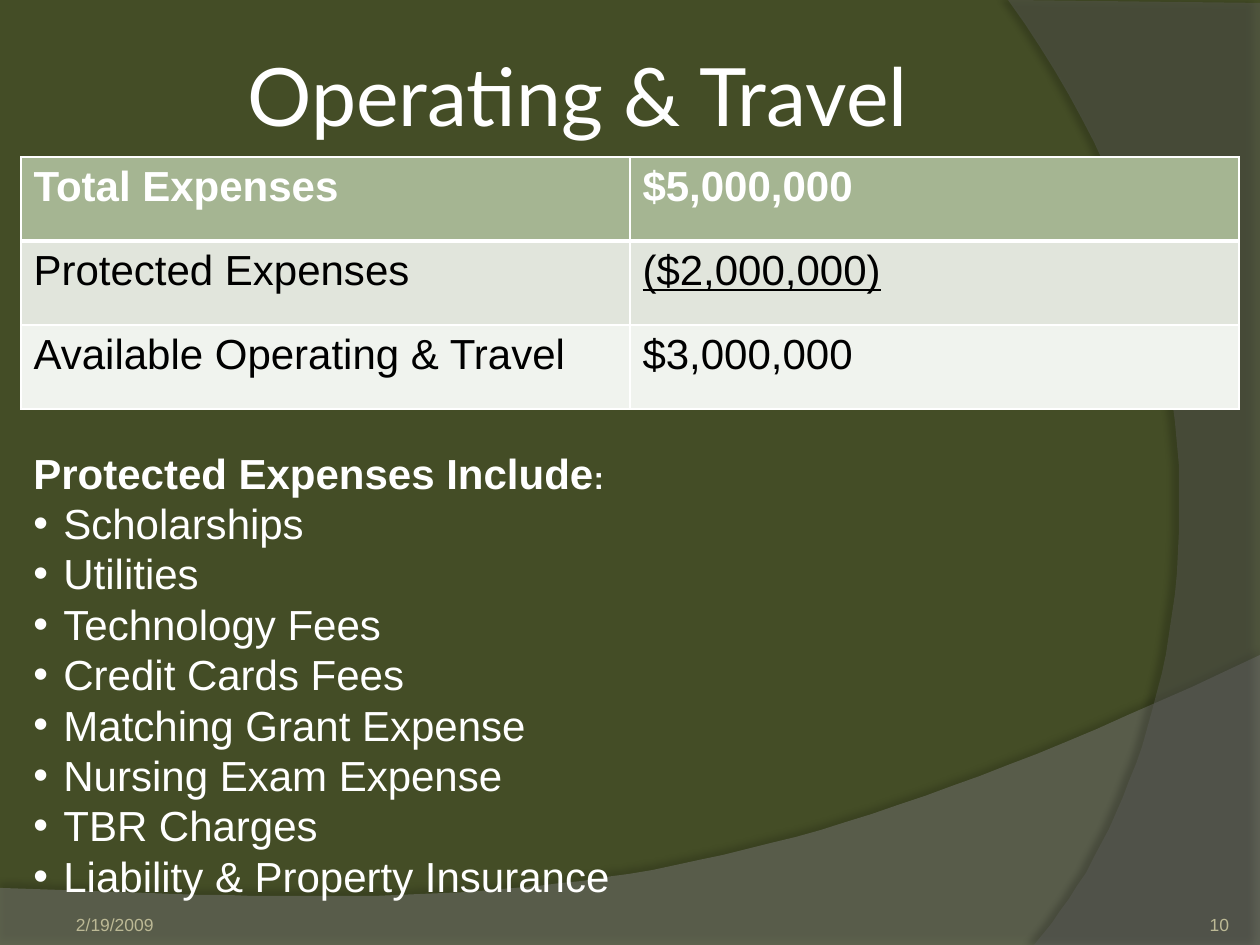
from lxml import etree
from pptx import Presentation
from pptx import util as u
from pptx.dml.color import RGBColor
from pptx.enum import text
from pptx.oxml import ns

PX = 914400 / 126
THEME = {
    "background": "444D26", "white": "FFFFFF", "black": "000000", "footer": "BCB995",
    "rows": ["A5B592", "E1E5DC", "F0F3EE"],
    "title_size": 46, "body_size": 24, "colon_size": 18, "footer_size": 10,
    "title_font": "Lato", "body_font": "Arial", "line_pitch": 28.8,
}
TITLE = {"text": "Operating & Travel", "area": (63, 21, 1029, 147)}
BUDGET = [
    ("Total Expenses", "$5,000,000"),
    ("Protected Expenses", "($2,000,000)"),
    ("Available Operating & Travel", "$3,000,000"),
]
TABLE_AREA = (21, 157, 1218, 252)
LIST_AREA = (21, 441, 1218, 504)
LIST_HEADING = "Protected Expenses Include"
PROTECTED = [
    "Scholarships", "Utilities", "Technology Fees", "Credit Cards Fees",
    "Matching Grant Expense", "Nursing Exam Expense", "TBR Charges",
    "Liability & Property Insurance",
]
BULLET_INDENT = 30
FOOTERS = [
    {"text": "2/19/2009", "area": (63, 885, 294, 50), "margins": (13, 6, 13, 0),
     "align": text.PP_ALIGN.LEFT},
    {"text": "10", "area": (1124, 885, 105, 50), "margins": (0, 0, 0, 0),
     "align": text.PP_ALIGN.RIGHT},
]
WAVES = [
    {"corners": [(0, 888), (0, 946), (1260, 946)],
     "curve": [(1260, 655), (704, 919), (493, 906), (0, 888)],
     "color": "7F7F7F", "opacity": 45, "shadow": (35, 4, 3.5, 270)},
    {"corners": [(1260, 3), (1260, 945)],
     "curve": [(1034, 945), (1178, 780), (1283, 378), (1008, 0)],
     "color": "5E5E5E", "opacity": 40, "shadow": (45, 4, 4, 180)},
]


def emu(px):
    return round(px * PX)


def child(parent, tag, **attributes):
    node = etree.SubElement(parent, ns.qn(tag))
    for name, value in attributes.items():
        node.set(name, str(value))
    return node


def apply(target, values):
    for name, value in values.items():
        setattr(target, name, value)


def bezier(points, steps=48):
    for step in range(steps + 1):
        t = step / steps
        weights = ((1 - t) ** 3, 3 * t * (1 - t) ** 2, 3 * t * t * (1 - t), t ** 3)
        yield tuple(sum(w * p[axis] for w, p in zip(weights, points)) for axis in (0, 1))


def add_wave(page, wave):
    outline = wave["corners"] + list(bezier(wave["curve"]))
    builder = page.shapes.build_freeform(*outline[0], scale=PX)
    builder.add_line_segments(outline[1:], close=True)
    shape = builder.convert_to_shape()
    shape.fill.solid()
    shape.fill.fore_color.rgb = RGBColor.from_string(wave["color"])
    shape.line.fill.background()
    shape.shadow.inherit = False
    properties = shape.element.spPr
    color = properties.find(ns.qn("a:solidFill"))[0]
    child(color, "a:alpha", val=wave["opacity"] * 1000)
    opacity, blur, distance, angle = wave["shadow"]
    shadow = child(properties.find(ns.qn("a:effectLst")), "a:outerShdw",
                   blurRad=u.Pt(blur), dist=u.Pt(distance), dir=angle * 60000,
                   algn="ctr", rotWithShape=0)
    child(child(shadow, "a:srgbClr", val=THEME["black"]), "a:alpha", val=opacity * 1000)


def write(para, words, size, color, font="body_font", **extra):
    span = para.add_run()
    span.text = words
    apply(span.font, {"name": THEME[font], "size": u.Pt(THEME[size]), **extra})
    span.font.color.rgb = RGBColor.from_string(THEME[color])


def add_box(page, area):
    box = page.shapes.add_textbox(*map(emu, area))
    box.text_frame.word_wrap = True
    return box


def set_margins(frame, margins):
    sides = ("margin_left", "margin_top", "margin_right", "margin_bottom")
    apply(frame, dict(zip(sides, map(emu, margins))))


def add_title(page):
    title = page.shapes.title
    apply(title, dict(zip(("left", "top", "width", "height"), map(emu, TITLE["area"]))))
    frame = title.text_frame
    apply(frame, {"word_wrap": True, "vertical_anchor": text.MSO_ANCHOR.MIDDLE})
    set_margins(frame, (6, 6, 6, 6))
    para = frame.paragraphs[0]
    para.alignment = text.PP_ALIGN.CENTER
    write(para, TITLE["text"], "title_size", "white", "title_font")
    title.element.getparent().append(title.element)


def add_borders(cell, header):
    properties = cell._tc.get_or_add_tcPr()
    for side in "LRTB":
        width = 3 if header and side == "B" else 1
        line = child(properties, f"a:ln{side}", w=u.Pt(width))
        child(child(line, "a:solidFill"), "a:srgbClr", val=THEME["white"])


def add_budget(page):
    table = page.shapes.add_table(len(BUDGET), 2, *map(emu, TABLE_AREA)).table
    for row, entries in enumerate(BUDGET):
        header = row == 0
        for column, words in enumerate(entries):
            cell = table.cell(row, column)
            add_borders(cell, header)
            cell.fill.solid()
            cell.fill.fore_color.rgb = RGBColor.from_string(THEME["rows"][row])
            write(cell.text_frame.paragraphs[0], words, "body_size",
                  "white" if header else "black", bold=header,
                  underline=words.startswith("("))


def add_protected(page):
    frame = add_box(page, LIST_AREA).text_frame
    para = frame.paragraphs[0]
    para.line_spacing = u.Pt(THEME["line_pitch"])
    write(para, LIST_HEADING, "body_size", "white", bold=True)
    write(para, ":", "colon_size", "white", bold=True)
    for item in PROTECTED:
        para = frame.add_paragraph()
        para.line_spacing = u.Pt(THEME["line_pitch"])
        properties = para._p.get_or_add_pPr()
        properties.set("marL", str(emu(BULLET_INDENT)))
        properties.set("indent", str(-emu(BULLET_INDENT)))
        child(properties, "a:buFont", typeface=THEME["body_font"])
        child(properties, "a:buChar", char="•")
        write(para, item, "body_size", "white")


def add_footer(page, footer):
    frame = add_box(page, footer["area"]).text_frame
    frame.vertical_anchor = text.MSO_ANCHOR.BOTTOM
    set_margins(frame, footer["margins"])
    para = frame.paragraphs[0]
    para.alignment = footer["align"]
    write(para, footer["text"], "footer_size", "footer")


def main():
    deck = Presentation()
    apply(deck, {"slide_width": emu(1260), "slide_height": emu(945)})
    page = deck.slides.add_slide(deck.slide_layouts[5])
    page.background.fill.solid()
    page.background.fill.fore_color.rgb = RGBColor.from_string(THEME["background"])
    for wave in WAVES:
        add_wave(page, wave)
    add_title(page)
    add_budget(page)
    for footer in FOOTERS:
        add_footer(page, footer)
    add_protected(page)
    deck.save("out.pptx")


if __name__ == "__main__":
    main()
